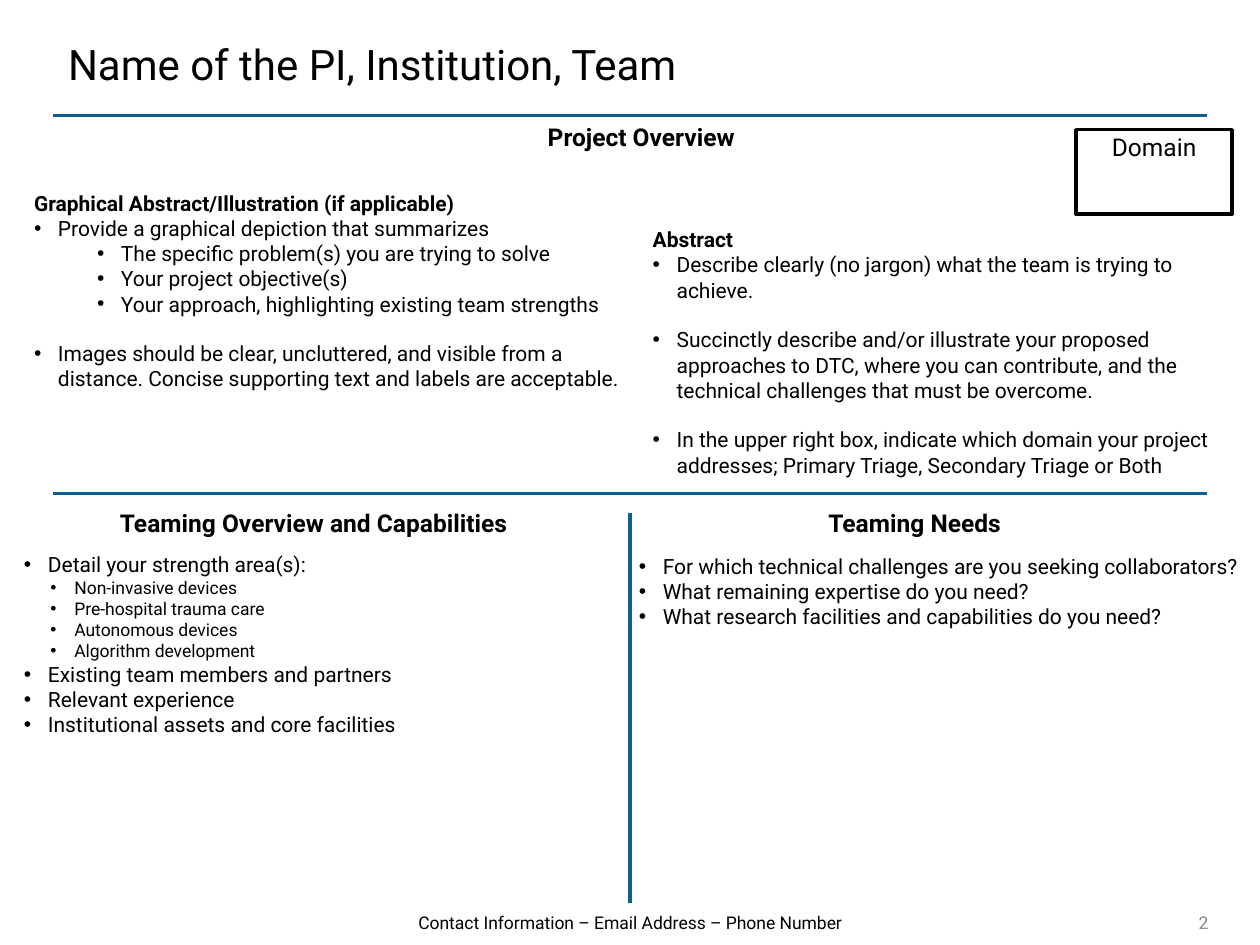
import pptx
import pptx.dml.color
import pptx.enum.shapes
import pptx.enum.text
import pptx.util
import lxml.etree

Inches = pptx.util.Inches
Pt = pptx.util.Pt
ALIGN = pptx.enum.text.PP_ALIGN
ANCHOR = pptx.enum.text.MSO_ANCHOR

BLACK = pptx.dml.color.RGBColor(0x00, 0x00, 0x00)
WHITE = pptx.dml.color.RGBColor(0xFF, 0xFF, 0xFF)
GRAY = pptx.dml.color.RGBColor(0x89, 0x89, 0x89)
BLUE = pptx.dml.color.RGBColor(0x0F, 0x5E, 0x90)
FONT = "Roboto"
HANGING = Inches(0.19)
GAP = Pt(14)
DRAWING = "{http://schemas.openxmlformats.org/drawingml/2006/main}"


def write_text(paragraph, text, size=12, bold=False, color=BLACK,
               align=ALIGN.LEFT, indent=None, space_before=Pt(0)):
    properties = paragraph._p.get_or_add_pPr()
    properties.set("marL", str(indent or 0))
    properties.set("indent", str(0 if indent is None else -HANGING))
    if indent is None:
        lxml.etree.SubElement(properties, DRAWING + "buNone")
    else:
        lxml.etree.SubElement(properties, DRAWING + "buChar", char="•")
    paragraph.alignment = align
    paragraph.space_before = space_before
    run = paragraph.add_run()
    run.text = text
    run.font.name = FONT
    run.font.size = Pt(size)
    run.font.bold = bold
    run.font.color.rgb = color


def place(shape, left, top, width, height):
    shape.left, shape.top = Inches(left), Inches(top)
    shape.width, shape.height = Inches(width), Inches(height)


def add_label(slide, text, box, anchor=ANCHOR.TOP, align=ALIGN.CENTER, **text_format):
    shape = slide.shapes.add_textbox(*map(Inches, box))
    shape.text_frame.word_wrap = True
    shape.text_frame.vertical_anchor = anchor
    write_text(shape.text_frame.paragraphs[0], text, align=align, **text_format)


def add_heading(slide, text, box):
    add_label(slide, text, box, size=14, bold=True)


def add_rule(slide, left, top, right, bottom):
    connector = slide.shapes.add_connector(
        pptx.enum.shapes.MSO_CONNECTOR.STRAIGHT, *map(Inches, (left, top, right, bottom)))
    connector.line.color.rgb = BLUE
    connector.line.width = Pt(1.75)
    lxml.etree.SubElement(connector._element.spPr, DRAWING + "effectLst")


def fill_list(placeholder, box, items):
    place(placeholder, *box)
    frame = placeholder.text_frame
    frame.word_wrap = True
    frame.auto_size = pptx.enum.text.MSO_AUTO_SIZE.NONE
    frame.vertical_anchor = ANCHOR.TOP
    for index, (text, text_format) in enumerate(items):
        paragraph = frame.add_paragraph() if index else frame.paragraphs[0]
        write_text(paragraph, text, **text_format)


def add_header(slide, left, top, width, height):
    title = slide.shapes.title
    place(title, left + 0.02, top, 7.81, 0.67)
    title.text_frame.vertical_anchor = ANCHOR.MIDDLE
    write_text(title.text_frame.paragraphs[0], "Name of the PI, Institution, Team", size=24)
    add_rule(slide, left, top + height, left + width, top + height)


def add_domain(slide, left, top, width, height):
    shape = slide.shapes.add_shape(
        pptx.enum.shapes.MSO_SHAPE.RECTANGLE, *map(Inches, (left, top, width, height)))
    shape.shadow.inherit = False
    shape.fill.solid()
    shape.fill.fore_color.rgb = WHITE
    shape.line.color.rgb = BLACK
    shape.line.width = Pt(2)
    shape.text_frame.vertical_anchor = ANCHOR.TOP
    shape.text_frame.margin_top = Inches(0.02)
    write_text(shape.text_frame.paragraphs[0], "Domain", size=14, align=ALIGN.CENTER)


def add_overview(slide, left, top, width, height):
    bullet = {"indent": HANGING}
    nested = {"indent": Inches(0.69)}
    spaced = {"indent": HANGING, "space_before": GAP}
    heading = {"bold": True}
    add_heading(slide, "Project Overview", (left + 2.17, top, 5, 0.34))
    add_domain(slide, left + 8.12, top + 0.11, 1.24, 0.67)
    fill_list(slide.placeholders[1], (left - 0.25, top + 0.54, 4.87, 2.02), [
        ("Graphical Abstract/Illustration (if applicable)", heading),
        ("Provide a graphical depiction that summarizes", bullet),
        ("The specific problem(s) you are trying to solve", nested),
        ("Your project objective(s)", nested),
        ("Your approach, highlighting existing team strengths", nested),
        ("Images should be clear, uncluttered, and visible from a distance. "
         "Concise supporting text and labels are acceptable.", spaced),
    ])
    fill_list(slide.placeholders[2], (left + 4.66, top + 0.83, 4.75, 2.12), [
        ("Abstract", heading),
        ("Describe clearly (no jargon) what the team is trying to achieve.", bullet),
        ("Succinctly describe and/or illustrate your proposed approaches to DTC, "
         "where you can contribute, and the technical challenges that must be overcome.",
         spaced),
        ("In the upper right box, indicate which domain your project addresses; "
         "Primary Triage, Secondary Triage or Both", spaced),
    ])
    add_rule(slide, left, top + height, left + width, top + height)


def add_teaming(slide, left, top, width, height):
    bullet = {"indent": HANGING}
    nested = {"indent": Inches(0.4), "size": 10}
    middle = left + width / 2
    add_rule(slide, middle, top + 0.15, middle, top + height)
    add_heading(slide, "Teaming Overview and Capabilities", (left + 0.05, top + 0.06, 4.04, 0.34))
    add_heading(slide, "Teaming Needs", (middle + 0.24, top + 0.06, 4.04, 0.34))
    fill_list(slide.placeholders[3], (left - 0.33, top + 0.41, 4.75, 1.78), [
        ("Detail your strength area(s):", bullet),
        ("Non-invasive devices", nested),
        ("Pre-hospital trauma care", nested),
        ("Autonomous devices", nested),
        ("Algorithm development", nested),
        ("Existing team members and partners", bullet),
        ("Relevant experience", bullet),
        ("Institutional assets and core facilities", bullet),
    ])
    fill_list(slide.placeholders[4], (middle - 0.03, top + 0.42, 5, 0.71), [
        ("For which technical challenges are you seeking collaborators?", bullet),
        ("What remaining expertise do you need?", bullet),
        ("What research facilities and capabilities do you need?", bullet),
    ])


def add_footer(slide, left, top, width, height):
    add_label(slide, "Contact Information – Email Address – Phone Number",
              (left, top, 7.08, height), size=10, anchor=ANCHOR.MIDDLE)
    add_label(slide, "2", (left + width - 0.83, top, 0.83, height), size=10,
              color=GRAY, anchor=ANCHOR.MIDDLE, align=ALIGN.RIGHT)


def main():
    presentation = pptx.Presentation()
    presentation.slide_width = Inches(10)
    presentation.slide_height = Inches(7.5)
    slide = presentation.slides.add_slide(
        presentation.slide_layouts.get_by_name("Comparison"))
    add_header(slide, 0.42, 0.17, 9.16, 0.75)
    add_overview(slide, 0.42, 0.92, 9.16, 3)
    add_teaming(slide, 0.42, 3.92, 9.16, 3.25)
    add_footer(slide, 1.46, 7.16, 8.23, 0.33)
    presentation.save("out.pptx")


if __name__ == "__main__":
    main()
